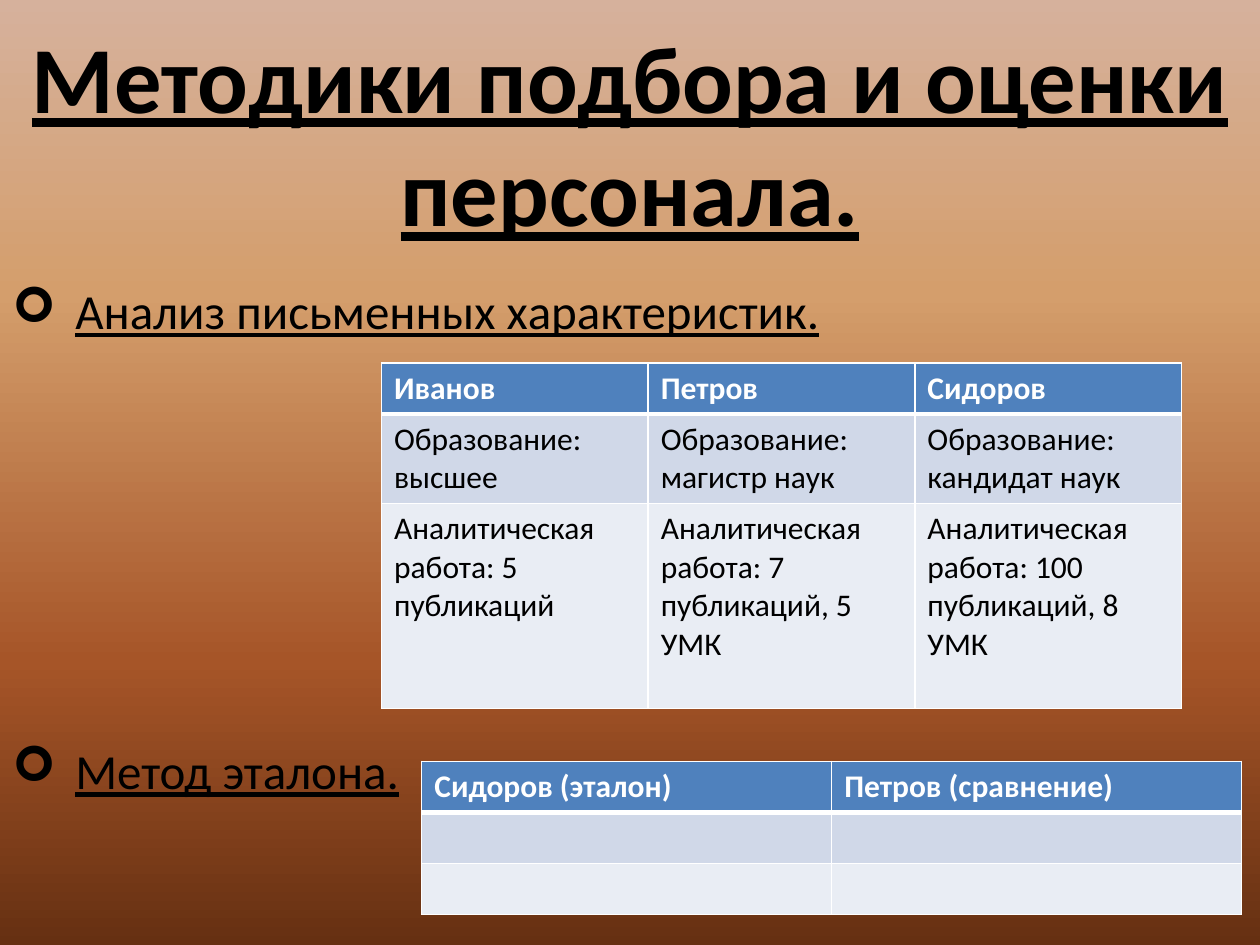
"""Build a slide on staff selection methods with two comparison tables."""
from lxml import etree
from pptx import Presentation
from pptx.dml.color import RGBColor
from pptx.enum.text import MSO_ANCHOR, PP_ALIGN
from pptx.oxml.ns import qn
from pptx.util import Pt

MIDDLE, CENTER = MSO_ANCHOR.MIDDLE, PP_ALIGN.CENTER
FONT = "Calibri"
COLORS = {"black": "000000", "white": "FFFFFF", "head": "4F81BD",
          "odd": "D0D8E8", "even": "E9EDF4"}
STOPS = {0: "D6B19C", 31: "D49E6C", 70: "A65528", 100: "663012"}


def style(run, color, **form):
    for key, val in {"name": FONT, **form}.items():
        setattr(run.font, key, val)
    run.font.color.rgb = RGBColor.from_string(COLORS[color])


def edge(cell, side, width):
    line = etree.SubElement(cell._tc.get_or_add_tcPr(), qn("a:ln" + side), w=str(Pt(width)))
    fill = etree.SubElement(line, qn("a:solidFill"))
    etree.SubElement(fill, qn("a:srgbClr"), val=COLORS["white"])


prs = Presentation()
prs.slide_width, prs.slide_height = Pt(720), Pt(540)
slide = prs.slides.add_slide(prs.slide_layouts[6])

back = slide.background.fill
back.gradient()
back.gradient_angle = 270
stops = slide.element.find(".//" + qn("a:gsLst"))
for old in list(stops):
    stops.remove(old)
for pos, color in STOPS.items():
    stop = etree.SubElement(stops, qn("a:gs"), pos=str(pos * 1000))
    etree.SubElement(stop, qn("a:srgbClr"), val=color)

title = slide.shapes.add_textbox(Pt(0), Pt(0), Pt(720), Pt(151.2)).text_frame
title.word_wrap = True
title.vertical_anchor = MIDDLE
para = title.paragraphs[0]
para.alignment = CENTER
run = para.add_run()
run.text = "Методики подбора и оценки персонала."
style(run, "black", size=Pt(54), bold=True, underline=True)

body = slide.shapes.add_textbox(Pt(0), Pt(157), Pt(720), Pt(383)).text_frame
body.word_wrap = True
for num, (text, gap) in enumerate([("Анализ письменных характеристик.", 0),
                                   ("Метод эталона.", 229)]):
    para = body.add_paragraph() if num else body.paragraphs[0]
    para.space_before = Pt(gap)
    props = para._p.get_or_add_pPr()
    props.set("marL", str(Pt(36)))
    props.set("indent", str(Pt(-36)))
    etree.SubElement(props, qn("a:buFont"), typeface="Wingdings")
    etree.SubElement(props, qn("a:buChar"), char="➢")
    run = para.add_run()
    run.text = text
    style(run, "black", size=Pt(28), underline=True)

tables = [
    (218, 207.4, 152.4, [29.2, 51.2, 117], [
        ["Иванов", "Петров", "Сидоров"],
        ["Образование: высшее", "Образование: магистр наук", "Образование: кандидат наук"],
        ["Аналитическая работа: 5 публикаций",
         "Аналитическая работа: 7 публикаций, 5 УМК",
         "Аналитическая работа: 100 публикаций, 8 УМК"]]),
    (241, 435, 234.3, [29.2] * 3, [
        ["Сидоров (эталон)", "Петров (сравнение)"], ["", ""], ["", ""]]),
]
for left, top, wide, highs, rows in tables:
    count = len(rows[0])
    grid = slide.shapes.add_table(len(rows), count, Pt(left), Pt(top),
                                  Pt(wide * count), Pt(sum(highs))).table
    for col in grid.columns:
        col.width = Pt(wide)
    for r, (high, texts) in enumerate(zip(highs, rows)):
        grid.rows[r].height = Pt(high)
        for c, text in enumerate(texts):
            cell = grid.cell(r, c)
            for side in "LRTB":
                edge(cell, side, 3 if (r, side) in [(0, "B"), (1, "T")] else 1)
            cell.fill.solid()
            shade = ["head", "odd", "even"][r]
            cell.fill.fore_color.rgb = RGBColor.from_string(COLORS[shade])
            if text:
                run = cell.text_frame.paragraphs[0].add_run()
                run.text = text
                style(run, "black" if r else "white", size=Pt(18), bold=r == 0)

prs.save("out.pptx")
